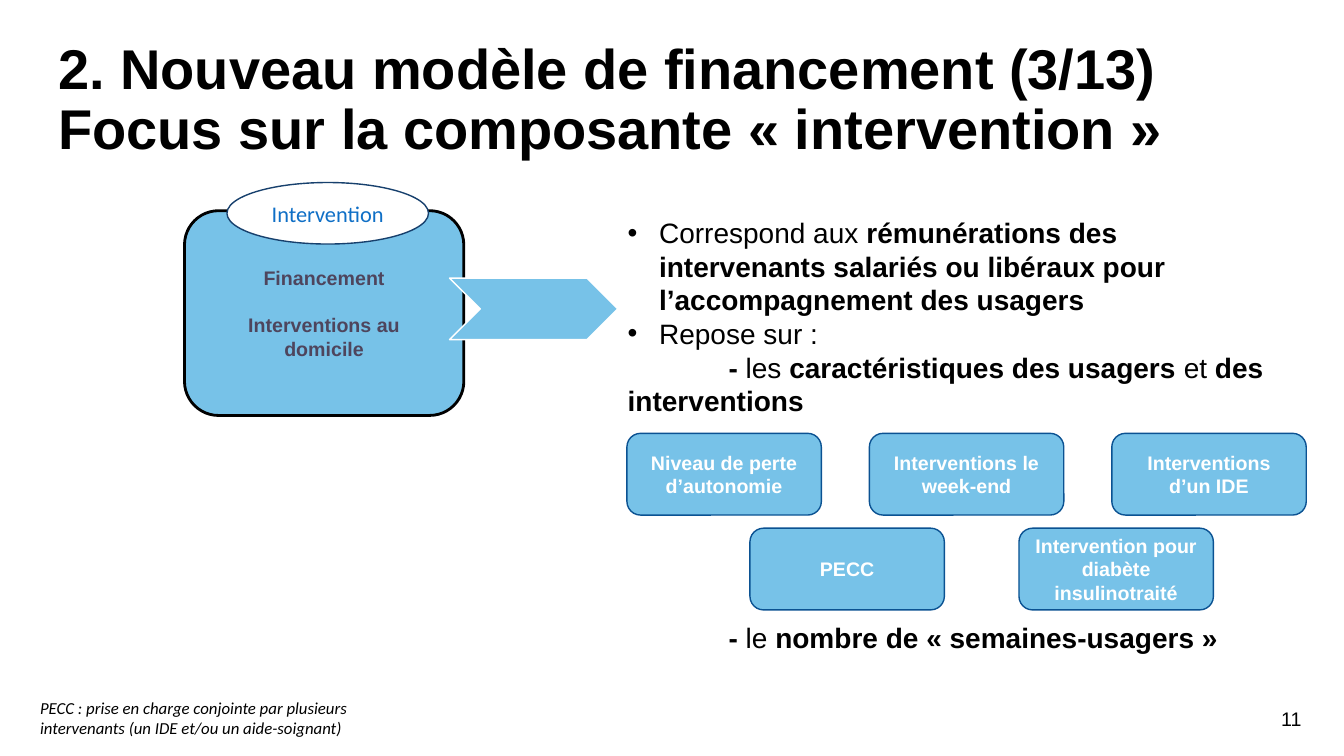
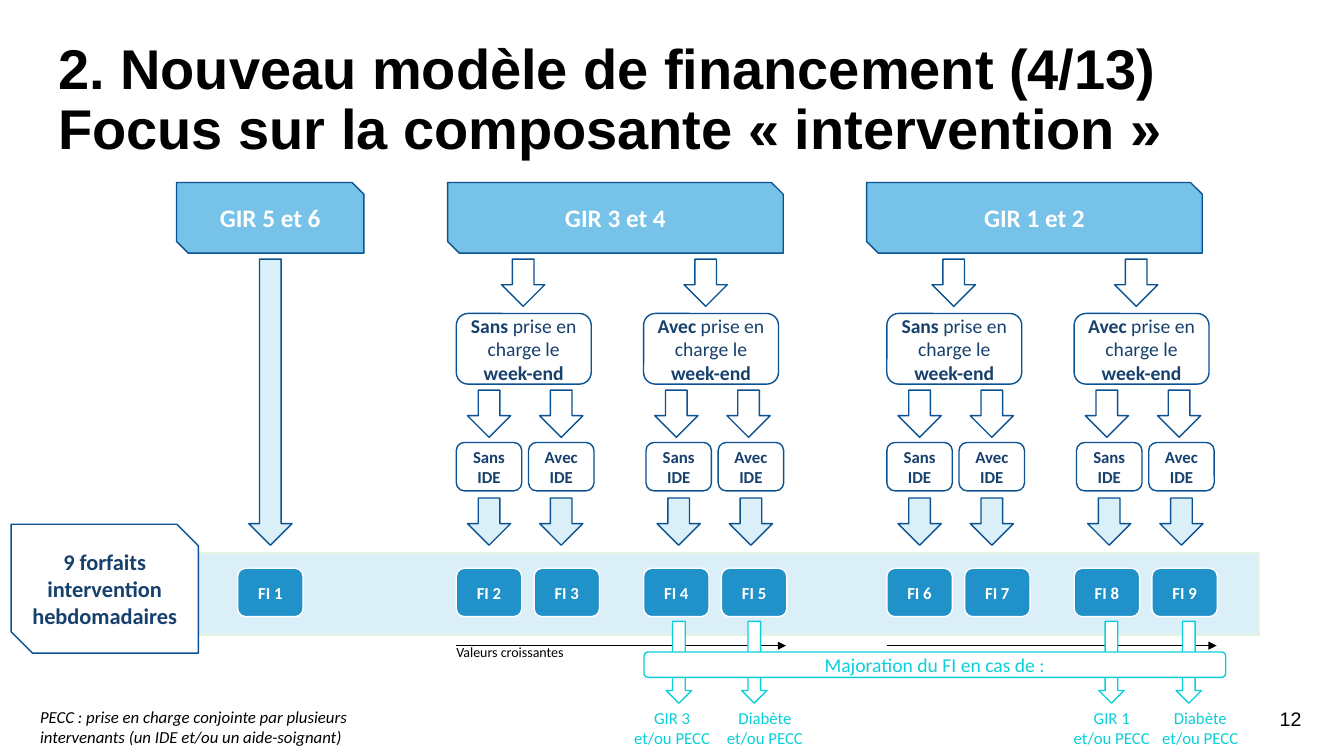
"""Build two slides on the « intervention » part of the home-care funding model."""
from dataclasses import dataclass
from typing import Optional

from lxml import etree
from pptx import Presentation
from pptx.dml.color import RGBColor
from pptx.enum import shapes, text
from pptx.oxml import ns
from pptx.util import Cm, Pt

BLACK = RGBColor(0x00, 0x00, 0x00)
WHITE = RGBColor(0xFF, 0xFF, 0xFF)
SKY = RGBColor(0x77, 0xC2, 0xE8)
PALE = RGBColor(0xDB, 0xEF, 0xF9)
BLUE = RGBColor(0x21, 0x91, 0xC9)
BRIGHT = RGBColor(0x0F, 0x6F, 0xC6)
EDGE = RGBColor(0x0B, 0x52, 0x92)
NAVY = RGBColor(0x17, 0x40, 0x6D)
PLUM = RGBColor(0x4E, 0x45, 0x5D)
TURQUOISE = RGBColor(0x0B, 0xD0, 0xD9)
BAND_EDGE = RGBColor(0xE5, 0xF4, 0xE0)

KIND = shapes.MSO_SHAPE
ALIGN = text.PP_ALIGN


@dataclass(frozen=True)
class Box:
    """Place and size in centimetres."""
    x: float
    y: float
    w: float
    h: float

    def emu(self) -> tuple:
        return Cm(self.x), Cm(self.y), Cm(self.w), Cm(self.h)


@dataclass(frozen=True)
class Type:
    """Look of a text."""
    size: float
    color: RGBColor
    bold: bool = False
    italic: bool = False
    font: str = "Calibri"
    align: ALIGN = ALIGN.CENTER
    spacing: Optional[float] = None


@dataclass(frozen=True)
class Look:
    """Outline form, fill and border of a shape."""
    kind: KIND
    fill: RGBColor
    line: RGBColor
    width: float = 1


@dataclass(frozen=True)
class Surcharge:
    """A reason for raising a package, with its arrow and caption positions."""
    reason: str
    arrow_x: float
    caption_x: float


TITLE = Type(40, BLACK, bold=True, font="Arial", align=ALIGN.LEFT, spacing=0.9)
NUMBER = Type(14, BLACK, font="Arial", align=ALIGN.RIGHT)
FOOTNOTE = Type(12, BLACK, italic=True, align=ALIGN.LEFT)
BODY = Type(20, BLACK, font="Arial", align=ALIGN.LEFT)
FUNDING = Type(14, PLUM, bold=True, font="Arial")
CRITERION = Type(14, WHITE, bold=True, font="Arial")
GIR = Type(18, WHITE, bold=True)
WEEKEND = Type(14, NAVY)
IDE = Type(12, NAVY, bold=True)
PACKAGE = Type(12, WHITE, bold=True)
CAPTION = Type(12, TURQUOISE)

CRITERION_BOX = Look(KIND.ROUNDED_RECTANGLE, SKY, EDGE)
GIR_BOX = Look(KIND.SNIP_2_DIAG_RECTANGLE, SKY, EDGE)
LABEL_BOX = Look(KIND.SNIP_2_DIAG_RECTANGLE, WHITE, EDGE)
CHOICE_BOX = Look(KIND.ROUNDED_RECTANGLE, WHITE, EDGE)
PACKAGE_BOX = Look(KIND.ROUNDED_RECTANGLE, BLUE, WHITE)
CHOICE_ARROW = Look(KIND.DOWN_ARROW, WHITE, EDGE)
RESULT_ARROW = Look(KIND.DOWN_ARROW, PALE, EDGE)
SURCHARGE_ARROW = Look(KIND.DOWN_ARROW, WHITE, TURQUOISE)
SURCHARGE_BAR = Look(KIND.ROUNDED_RECTANGLE, WHITE, TURQUOISE)

GROUP_X = (11.5, 22.35)
ARROW_W, ARROW_H = 1.09, 1.19
WEEKEND_W = 3.4
SMALL_W, SMALL_H = 1.65, 1.22
PACKAGE_Y = 14.32
SURCHARGES = (
    Surcharge("GIR 3", 16.79, 15.72),
    Surcharge("Diabète", 18.69, 18.06),
    Surcharge("GIR 1", 27.69, 26.8),
    Surcharge("Diabète", 29.64, 29.03),
)


def write(paragraph, content: str, style: Type) -> None:
    """Fill a paragraph; text between double stars is bold."""
    if "**" in content:
        for index, piece in enumerate(content.split("**")):
            if piece:
                run = paragraph.add_run()
                run.text = piece
                run.font.bold = index % 2 == 1
    else:
        paragraph.text = content
        paragraph.font.bold = style.bold
    paragraph.alignment = style.align
    paragraph.line_spacing = style.spacing
    paragraph.font.name = style.font
    paragraph.font.size = Pt(style.size)
    paragraph.font.italic = style.italic
    paragraph.font.color.rgb = style.color


def add_text(slide, box: Box, content: str, style: Type):
    """Add a wrapping text box and return its text frame."""
    frame = slide.shapes.add_textbox(*box.emu()).text_frame
    frame.word_wrap = True
    write(frame.paragraphs[0], content, style)
    return frame


def add_form(slide, box: Box, look: Look, content: str = "", style: Optional[Type] = None):
    """Add a preset shape and return its text frame."""
    form = slide.shapes.add_shape(look.kind, *box.emu())
    form.shadow.inherit = False
    form.fill.solid()
    form.fill.fore_color.rgb = look.fill
    form.line.color.rgb = look.line
    form.line.width = Pt(look.width)
    frame = form.text_frame
    frame.word_wrap = True
    frame.vertical_anchor = text.MSO_ANCHOR.MIDDLE
    if style:
        write(frame.paragraphs[0], content, style)
    return frame


def add_growth_arrow(slide, x: float, y: float, length: float) -> None:
    """Add a thin horizontal arrow."""
    arrow = slide.shapes.add_connector(
        shapes.MSO_CONNECTOR.STRAIGHT, Cm(x), Cm(y), Cm(x + length), Cm(y))
    arrow.line.color.rgb = BLACK
    arrow.line.width = Pt(0.5)
    outline = arrow.line._get_or_add_ln()
    etree.SubElement(outline, ns.qn("a:tailEnd"), type="triangle")
    etree.SubElement(arrow._element.spPr, ns.qn("a:effectLst"))


def indent(paragraph, margin: float, first: float, bullet: str = "") -> None:
    """Set the indents of a paragraph and, if given, its bullet."""
    properties = paragraph._p.get_or_add_pPr()
    properties.set("marL", str(Cm(margin)))
    properties.set("indent", str(Cm(first)))
    if bullet:
        etree.SubElement(properties, ns.qn("a:buFont"), typeface="Arial")
        etree.SubElement(properties, ns.qn("a:buChar"), char=bullet)


def start_slide(deck, part: int, number: int, footnote_y: float):
    """Add a slide with title, number and footnote."""
    slide = deck.slides.add_slide(deck.slide_layouts[6])
    add_text(slide, Box(25.43, 17.7, 7.62, 1.02), str(number), NUMBER)
    add_text(slide, Box(1.22, 0.91, 30.91, 3.68),
             f"2. Nouveau modèle de financement ({part}/13)\v"
             "Focus sur la composante « intervention »", TITLE)
    add_text(slide, Box(0.76, footnote_y, 8.66, 1.27),
             "PECC : prise en charge conjointe par plusieurs intervenants "
             "(un IDE et/ou un aide-soignant)", FOOTNOTE)
    return slide


def build_component(deck) -> None:
    """Describe what the component pays for and depends on."""
    slide = start_slide(deck, 3, 11, 17.45)
    frame = slide.shapes.add_textbox(*Box(15.57, 5.31, 16.84, 12.14).emu()).text_frame
    frame.word_wrap = True
    lines = (
        ("Correspond aux **rémunérations des intervenants salariés ou libéraux "
         "pour l’accompagnement des usagers**", 0.79, -0.79, "•"),
        ("Repose sur :", 0.79, -0.79, "•"),
        ("**-** les **caractéristiques des usagers **et** des interventions**", 0, 2.54, ""),
        ("**- **le **nombre de « semaines-usagers »**", 0, 2.54, ""),
    )
    for index, (content, margin, first, bullet) in enumerate(lines):
        paragraph = frame.add_paragraph() if index else frame.paragraphs[0]
        indent(paragraph, margin, first, bullet)
        write(paragraph, content, BODY)
    paragraph.space_before = Pt(145)

    funding = add_form(slide, Box(4.65, 5.31, 7.04, 5.16),
                       Look(KIND.ROUNDED_RECTANGLE, SKY, BLACK, 2), "Financement", FUNDING)
    paid = funding.add_paragraph()
    write(paid, "Interventions au\vdomicile", FUNDING)
    paid.space_before = Pt(17)
    add_form(slide, Box(5.72, 4.6, 5.08, 1.55), Look(KIND.OVAL, WHITE, NAVY),
             "Intervention", Type(16, BRIGHT))
    add_form(slide, Box(11.33, 7.01, 4.24, 1.55), Look(KIND.CHEVRON, SKY, WHITE))

    criteria = (
        (15.8, 10.92, 6.11, ("Niveau de perte d’autonomie", "Interventions le week-end",
                             "Interventions d’un IDE")),
        (18.9, 13.31, 6.78, ("PECC", "Intervention pour diabète insulinotraité")),
    )
    for left, top, step, names in criteria:
        for column, name in enumerate(names):
            add_form(slide, Box(left + column * step, top, 4.9, 2.06),
                     CRITERION_BOX, name, CRITERION)


def add_package(slide, x: float, number: int) -> None:
    """Add one numbered package."""
    add_form(slide, Box(x, PACKAGE_Y, SMALL_W, SMALL_H), PACKAGE_BOX, f"FI {number}", PACKAGE)


def add_branches(slide, left: float, first_package: int) -> None:
    """Add the weekend and nurse choices of a group, down to its packages."""
    for branch, weekend in enumerate(("Sans", "Avec")):
        weekend_x = left + branch * 4.72
        nurse_x = left + branch * 4.78
        add_form(slide, Box(left + 1.14 + branch * 4.6, 6.53, ARROW_W, ARROW_H), CHOICE_ARROW)
        add_form(slide, Box(weekend_x, 7.9, WEEKEND_W, 1.78), CHOICE_BOX,
                 f"**{weekend}** prise en charge le **week-end**", WEEKEND)
        for column, nurse in enumerate(("Sans", "Avec")):
            shift = column * 1.82
            centred = shift + (SMALL_W - ARROW_W) / 2
            add_form(slide, Box(weekend_x + centred, 9.83, ARROW_W, ARROW_H), CHOICE_ARROW)
            add_form(slide, Box(nurse_x + shift, 11.15, SMALL_W, SMALL_H),
                     CHOICE_BOX, f"{nurse} IDE", IDE)
            add_form(slide, Box(nurse_x + centred, 12.55, ARROW_W, ARROW_H), RESULT_ARROW)
            add_package(slide, weekend_x + column * 1.96, first_package + 2 * branch + column)


def build_packages(deck) -> None:
    """Show the tree that leads to the nine weekly packages."""
    slide = start_slide(deck, 4, 12, 17.68)
    for name, left, width in (("GIR 5 et 6", 4.45, 4.72), ("GIR 3 et 4", 11.28, 8.46),
                              ("GIR 1 et 2", 21.84, 8.46)):
        add_form(slide, Box(left, 4.6, width, 1.78), GIR_BOX, name, GIR)
    add_form(slide, Box(3.56, 13.94, 28.17, 2.06), Look(KIND.RECTANGLE, PALE, BAND_EDGE))
    add_form(slide, Box(0.28, 13.21, 4.72, 3.25), LABEL_BOX,
             "9 forfaits intervention hebdomadaires", Type(16, NAVY, bold=True))

    add_form(slide, Box(6.27, 6.53, ARROW_W, 7.21), RESULT_ARROW)
    add_package(slide, 5.99, 1)
    for group, left in enumerate(GROUP_X):
        add_branches(slide, left, 2 + 4 * group)
        add_growth_arrow(slide, left, 16.27, 8.31)
    add_text(slide, Box(11.25, 16.1, 9.32, 0.69), "Valeurs croissantes",
             Type(10, BLACK, align=ALIGN.LEFT))

    for surcharge in SURCHARGES:
        add_form(slide, Box(surcharge.arrow_x, 15.66, 0.64, 2.06), SURCHARGE_ARROW)
        add_text(slide, Box(surcharge.caption_x, 17.7, 2.44, 1.27),
                 f"{surcharge.reason}\vet/ou PECC", CAPTION)
    add_form(slide, Box(16.23, 16.43, 14.66, 0.64), SURCHARGE_BAR,
             "Majoration du FI en cas de :", Type(14, TURQUOISE))


def main() -> None:
    """Build and save the deck."""
    deck = Presentation()
    deck.slide_width, deck.slide_height = Cm(33.87), Cm(19.05)
    build_component(deck)
    build_packages(deck)
    deck.save("out.pptx")


if __name__ == "__main__":
    main()
